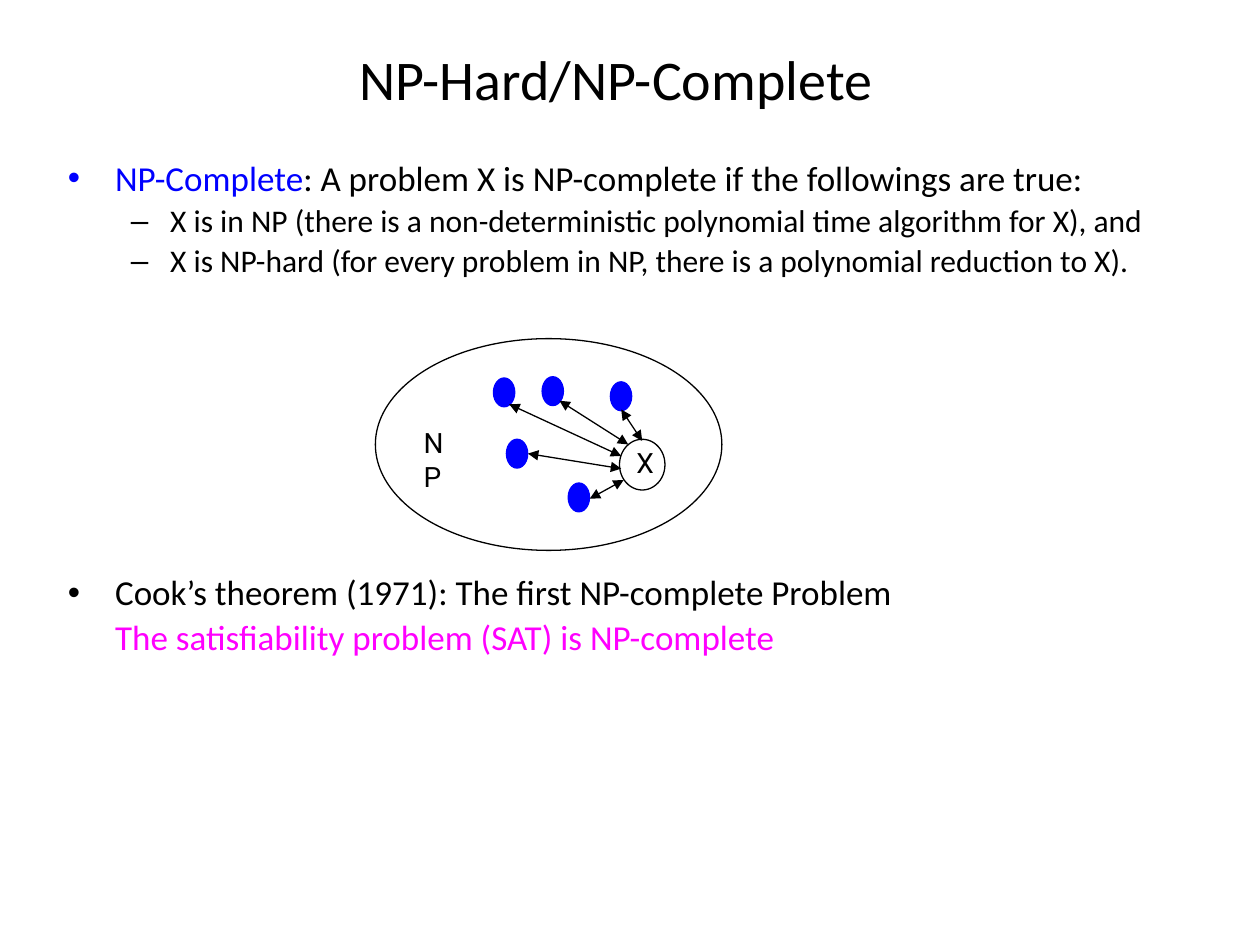
"""Build the NP-Hard/NP-Complete slide."""
from dataclasses import dataclass

import lxml.etree
import pptx
import pptx.dml.color
import pptx.enum.shapes
import pptx.enum.text
import pptx.oxml.ns
import pptx.util

Pt = pptx.util.Pt
qn = pptx.oxml.ns.qn
Anchor = pptx.enum.text.MSO_ANCHOR
Align = pptx.enum.text.PP_ALIGN
AutoSize = pptx.enum.text.MSO_AUTO_SIZE


@dataclass(frozen=True)
class Theme:
    ink: str = "000000"
    blue: str = "0000FF"
    magenta: str = "FF00FF"
    body_font: str = "Calibri"
    label_font: str = "Roboto"
    title_size: float = 32
    point_size: float = 20
    detail_size: float = 18
    label_size: float = 16
    line_width: float = 0.75


def apply(target, values):
    for attribute, value in values.items():
        setattr(target, attribute, value)


def rgb(color):
    return pptx.dml.color.RGBColor.from_string(color)


class SlideBuilder:
    def __init__(self, slide, theme):
        self.slide = slide
        self.theme = theme

    def add_run(self, paragraph, text, size, color, font):
        run = paragraph.add_run()
        run.text = text
        apply(run.font, {"size": Pt(size), "name": font})
        run.font.color.rgb = rgb(color)

    def set_title(self, text, left, top, width, height):
        title = self.slide.shapes.title
        apply(title, {"left": Pt(left), "top": Pt(top), "width": Pt(width), "height": Pt(height)})
        apply(title.text_frame, {"vertical_anchor": Anchor.MIDDLE, "word_wrap": True,
                                 "auto_size": AutoSize.NONE})
        heading = title.text_frame.paragraphs[0]
        heading.alignment = Align.CENTER
        self.add_run(heading, text, self.theme.title_size, self.theme.ink, self.theme.body_font)

    def add_text_frame(self, left, top, width, height, auto_size=AutoSize.NONE):
        box = self.slide.shapes.add_textbox(Pt(left), Pt(top), Pt(width), Pt(height))
        apply(box.text_frame, {"word_wrap": True, "auto_size": auto_size})
        return box.text_frame

    def add_label(self, text, left, top, width, height):
        frame = self.add_text_frame(left, top, width, height, AutoSize.SHAPE_TO_FIT_TEXT)
        self.add_run(frame.paragraphs[0], text, self.theme.label_size,
                     self.theme.ink, self.theme.label_font)

    def add_point(self, paragraph, runs, bullet=None, level=0, gap=None):
        size, margin, hanging = ((self.theme.point_size, 27, 27),
                                 (self.theme.detail_size, 58.5, 22.5))[level]
        apply(paragraph, {"level": level, "line_spacing": 0.9,
                          "space_before": Pt(gap or size * 0.2)})
        properties = paragraph._p.get_or_add_pPr()
        properties.set("marL", str(Pt(margin)))
        properties.set("indent", str(-Pt(hanging) if bullet else 0))
        if bullet:
            lxml.etree.SubElement(properties, qn("a:buFont"), typeface="Arial")
            lxml.etree.SubElement(properties, qn("a:buChar"), char=bullet)
        for text, color in runs:
            self.add_run(paragraph, text, size, color, self.theme.body_font)

    def add_ellipse(self, left, top, width, height, line, fill=None):
        ellipse = self.slide.shapes.add_shape(
            pptx.enum.shapes.MSO_SHAPE.OVAL, Pt(left), Pt(top), Pt(width), Pt(height))
        ellipse.shadow.inherit = False
        if fill:
            ellipse.fill.solid()
            ellipse.fill.fore_color.rgb = rgb(fill)
        else:
            ellipse.fill.background()
        ellipse.line.color.rgb = rgb(line)
        ellipse.line.width = Pt(self.theme.line_width)

    def add_double_arrow(self, start, end):
        arrow = self.slide.shapes.add_connector(
            pptx.enum.shapes.MSO_CONNECTOR.STRAIGHT, *map(Pt, start + end))
        arrow.line.color.rgb = rgb(self.theme.ink)
        arrow.line.width = Pt(self.theme.line_width)
        outline = arrow.line._get_or_add_ln()
        for tip in ("a:headEnd", "a:tailEnd"):
            lxml.etree.SubElement(outline, qn(tip), type="triangle")
        lxml.etree.SubElement(arrow._element.spPr, qn("a:effectLst"))


def main():
    theme = Theme()
    deck = pptx.Presentation()
    apply(deck, {"slide_width": Pt(720), "slide_height": Pt(540)})
    builder = SlideBuilder(deck.slides.add_slide(deck.slide_layouts[5]), theme)

    builder.set_title("NP-Hard/NP-Complete", 46, 14.5, 612, 60.5)

    points = [
        {"runs": [("NP-Complete", theme.blue),
                  (": A problem X is NP-complete if the followings are true:", theme.ink)],
         "bullet": "•"},
        {"runs": [("X is in NP (there is a non-deterministic polynomial time algorithm for X), and",
                   theme.ink)], "bullet": "–", "level": 1},
        {"runs": [("X is NP-hard (for every problem in NP, there is a polynomial reduction to X).",
                   theme.ink)], "bullet": "–", "level": 1},
        {"runs": [("Cook’s theorem (1971): The first NP-complete Problem", theme.ink)],
         "bullet": "•", "gap": 169},
        {"runs": [("The satisfiability problem (SAT) is NP-complete", theme.magenta)]},
    ]
    body = builder.add_text_frame(31.7, 88.5, 664, 423)
    for index, point in enumerate(points):
        paragraph = body.add_paragraph() if index else body.paragraphs[0]
        builder.add_point(paragraph, **point)

    builder.add_ellipse(214.5, 193.5, 198, 121, theme.ink)
    problems = [(282, 216), (309.8, 215.3), (348.8, 218.2), (324.7, 276), (289.4, 251)]
    for left, top in problems:
        builder.add_ellipse(left, top, 12.2, 16.5, theme.blue, theme.blue)
    builder.add_ellipse(354, 251, 26, 29, theme.ink)
    builder.add_label("X", 356.5, 251, 24, 26.6)

    reductions = [
        ((355, 234), (367, 252)),
        ((319.7, 229), (359, 254)),
        ((291, 231), (355, 260.6)),
        ((301.7, 259.2), (355, 267.8)),
        ((337, 285), (356.4, 274.3)),
    ]
    for problem, target in reductions:
        builder.add_double_arrow(problem, target)
    builder.add_label("NP", 235, 239.8, 33.8, 26.6)

    deck.save("out.pptx")


if __name__ == "__main__":
    main()
